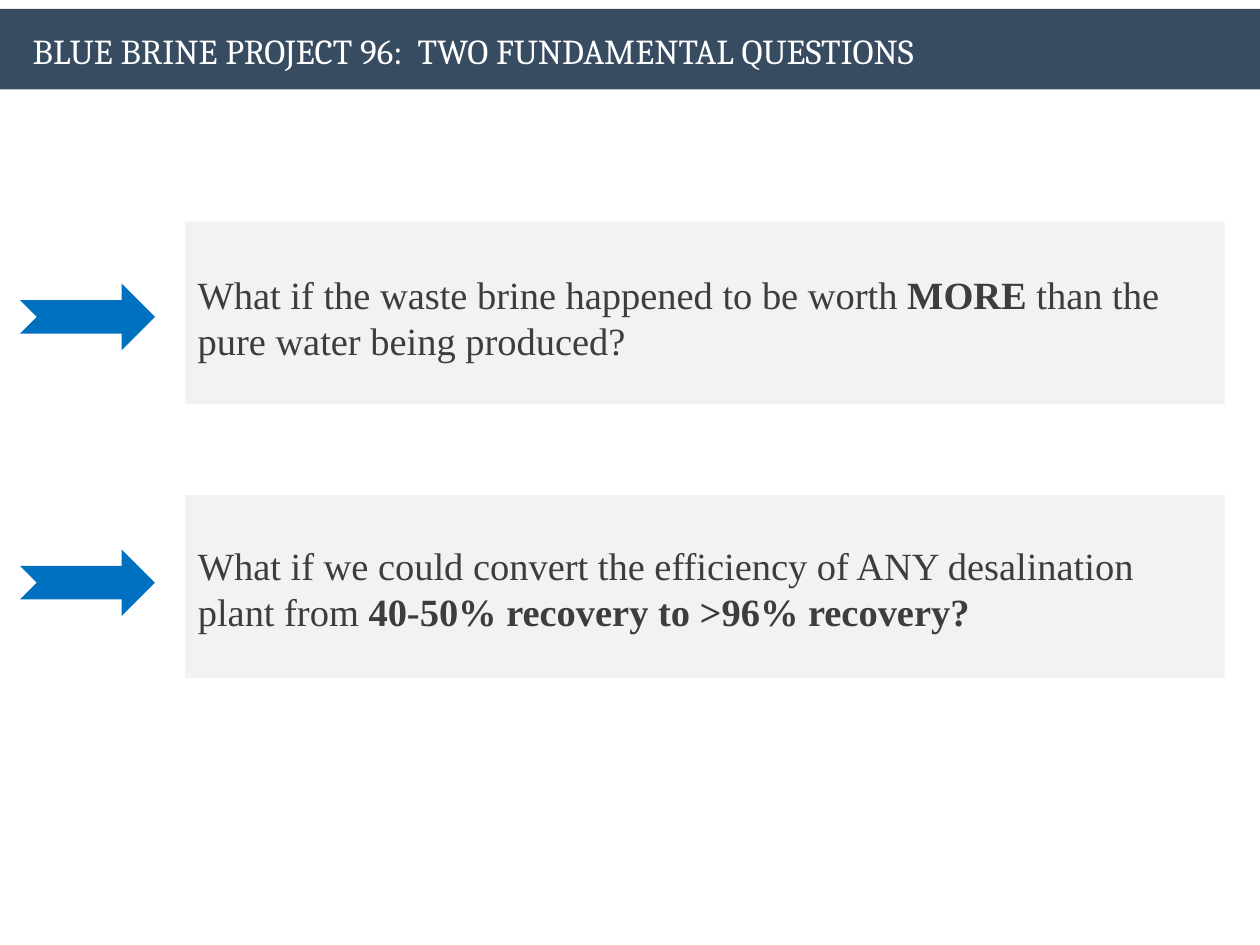
from dataclasses import dataclass

import pptx
import pptx.dml.color
import pptx.enum.shapes
import pptx.enum.text
import pptx.oxml
import pptx.oxml.ns
import pptx.util

Pt = pptx.util.Pt
Kind = pptx.enum.shapes.MSO_SHAPE
Anchor = pptx.enum.text.MSO_ANCHOR
Align = pptx.enum.text.PP_ALIGN

HUES = {"bar": "384C61", "title": "FFFFFF", "panel": "F2F2F2",
        "text": "3D3D3D", "arrow": "0070C0"}
LEFT, WIDE, HIGH = 105.84, 594, 104.4  # question panels


@dataclass
class Ask:
    top: float
    arrow: float  # top of the arrow
    inset: float  # top margin of the text
    words: list[tuple[str, bool]]  # wording, bold


ASKS = [
    Ask(126.72, 162, 8, [
        ("What if the waste brine happened to be worth ", False),
        ("MORE", True),
        (" than the pure water being produced?", False)]),
    Ask(282.96, 313.92, 5, [
        ("What if we could convert the efficiency of ANY desalination plant from ", False),
        ("40-50% recovery to >96% recovery?", True)]),
]


def tint(hue: str) -> pptx.dml.color.RGBColor:
    return pptx.dml.color.RGBColor.from_string(HUES[hue])


def place(shape, left: float, top: float, wide: float, high: float) -> None:
    shape.left, shape.top = Pt(left), Pt(top)
    shape.width, shape.height = Pt(wide), Pt(high)


def paint(shape, hue: str) -> None:
    shape.fill.solid()
    shape.fill.fore_color.rgb = tint(hue)
    shape.line.fill.background()


def add_form(slide, kind, hue: str, *box: float):
    form = slide.shapes.add_shape(kind, *map(Pt, box))
    form.shadow.inherit = False
    paint(form, hue)
    return form


def style(font, name: str, size: float, hue: str, bold: bool = False) -> None:
    font.name, font.size, font.bold = name, Pt(size), bold
    font.color.rgb = tint(hue)


def write_ask(panel, ask: Ask) -> None:
    frame = panel.text_frame
    frame.word_wrap = True
    frame.auto_size = pptx.enum.text.MSO_AUTO_SIZE.NONE
    frame.vertical_anchor = Anchor.MIDDLE
    frame.margin_top = Pt(ask.inset)
    para = frame.paragraphs[0]
    para.alignment = Align.LEFT
    para.space_before = Pt(0)
    # Plain paragraph: no bullet, no hanging indent
    props = para._p.get_or_add_pPr()
    props.set("marL", "0")
    props.set("indent", "0")
    props.append(pptx.oxml.parse_xml(
        f"<a:buNone {pptx.oxml.ns.nsdecls('a')}/>"))
    for text, bold in ask.words:
        run = para.add_run()
        run.text = text
        style(run.font, "Times New Roman", 22, "text", bold)


def main() -> None:
    deck = pptx.Presentation()
    deck.slide_width, deck.slide_height = Pt(720), Pt(540)
    slide = deck.slides.add_slide(deck.slide_layouts[1])
    title, body = slide.placeholders

    # Title bar, sent behind the title
    bar = add_form(slide, Kind.RECTANGLE, "bar", 0, 5.04, 720, 46.08)
    slide.shapes._spTree.insert(2, bar._element)

    # Title
    place(title, 11.52, 8.64, 698.4, 36)
    frame = title.text_frame
    frame.text = "BLUE BRINE PROJECT 96:  TWO FUNDAMENTAL QUESTIONS"
    frame.auto_size = pptx.enum.text.MSO_AUTO_SIZE.NONE
    frame.vertical_anchor = Anchor.BOTTOM
    para = frame.paragraphs[0]
    para.alignment = Align.LEFT
    style(para.runs[0].font, "Cambria", 20, "title")

    # Questions: the first in a rectangle, the second in the body placeholder
    first, second = ASKS
    place(body, LEFT, second.top, WIDE, HIGH)
    paint(body, "panel")
    panel = add_form(slide, Kind.RECTANGLE, "panel", LEFT, first.top, WIDE, HIGH)
    for shape, ask in ((panel, first), (body, second)):
        write_ask(shape, ask)
        add_form(slide, Kind.NOTCHED_RIGHT_ARROW, "arrow",
                 11.52, ask.arrow, 77.04, 38.16)

    deck.save("out.pptx")


if __name__ == "__main__":
    main()
